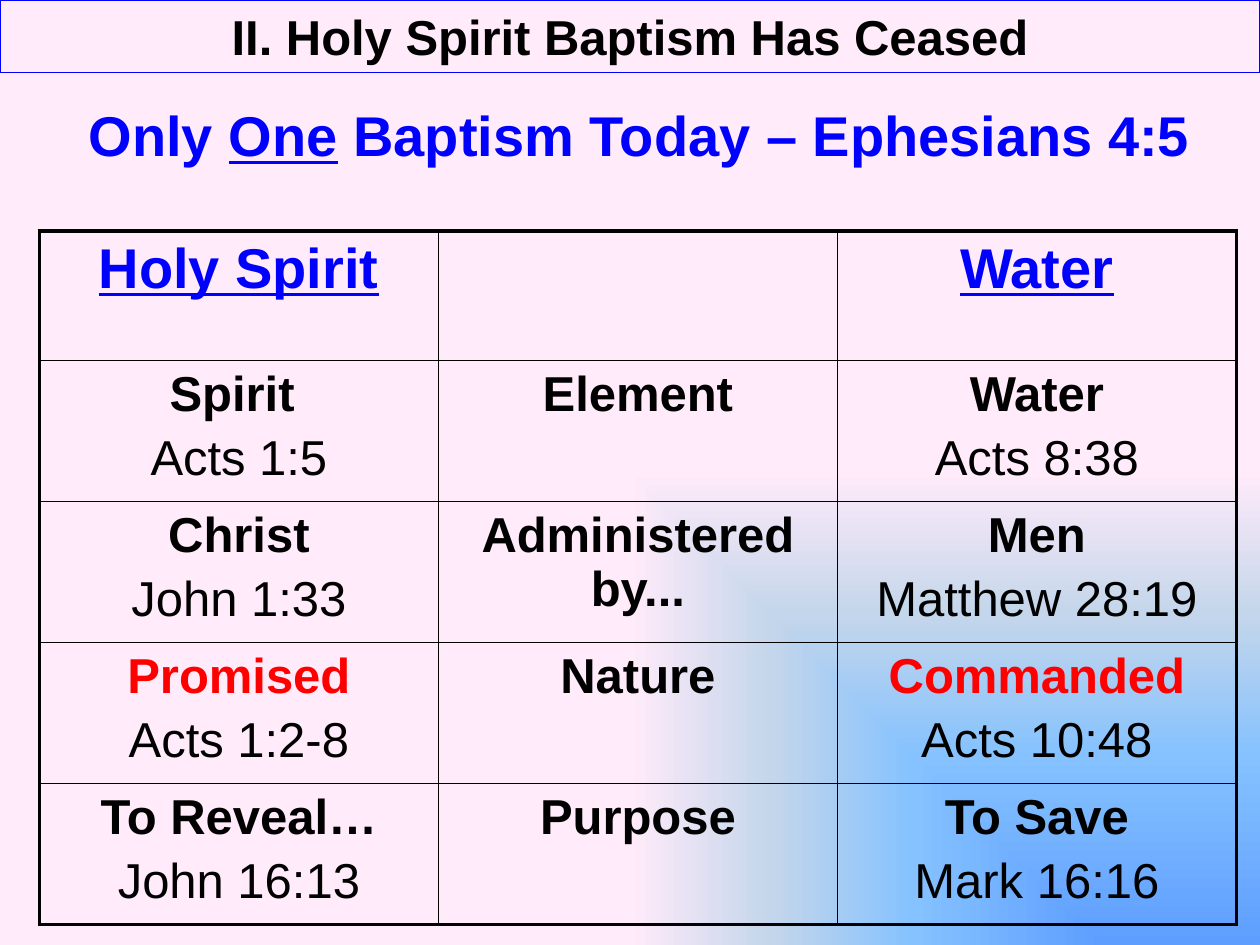
from dataclasses import dataclass

from pptx import Presentation
from pptx.dml.color import RGBColor as Color
from pptx.enum.shapes import MSO_SHAPE as Shape
from pptx.enum.text import MSO_ANCHOR as Anchor, MSO_AUTO_SIZE as AutoSize, PP_ALIGN as Align
from pptx.oxml import parse_xml
from pptx.util import Pt

NAMESPACES = (
    'xmlns:a="http://schemas.openxmlformats.org/drawingml/2006/main" '
    'xmlns:p="http://schemas.openxmlformats.org/presentationml/2006/main"'
)


@dataclass(frozen=True)
class Theme:
    font: str = "Arial"
    ink: str = "000000"
    blue: str = "0000FF"
    red: str = "FF0000"
    heading: int = 32
    body: int = 28
    thin: float = 1
    thick: float = 2.25
    gradient: tuple = ((0, "5E9EFF"), (40, "85C2FF"), (70, "C4D6EB"), (100, "FFEBFA"))


THEME = Theme()

HEADERS = ("Holy Spirit", "", "Water")
ROWS = (
    (("Spirit ", "Acts 1:5"), "Element", ("Water", "Acts 8:38"), THEME.ink),
    (("Christ", "John 1:33"), "Administered by...", ("Men", "Matthew 28:19"), THEME.ink),
    (("Promised", "Acts 1:2-8"), "Nature", ("Commanded", "Acts 10:48"), THEME.red),
    (("To Reveal…", "John 16:13"), "Purpose", ("To Save", "Mark 16:16"), THEME.ink),
)


def add_text(para, text, size=THEME.body, color=THEME.ink, bold=True, underline=False):
    para.alignment = Align.CENTER
    span = para.add_run()
    span.text = text
    span.font.name = THEME.font
    span.font.size = Pt(size)
    span.font.bold = bold
    span.font.underline = underline
    span.font.color.rgb = Color.from_string(color)


def paint_background(page):
    stops = "".join(
        f'<a:gs pos="{position * 1000}"><a:srgbClr val="{color}"/></a:gs>'
        for position, color in THEME.gradient
    )
    page.element.cSld.insert(0, parse_xml(
        f'<p:bg {NAMESPACES}><p:bgPr><a:gradFill rotWithShape="1"><a:gsLst>{stops}</a:gsLst>'
        '<a:path path="rect"><a:fillToRect l="100000" t="100000"/></a:path>'
        '</a:gradFill><a:effectLst/></p:bgPr></p:bg>'
    ))


def add_banner(page, left, top, width, height):
    box = page.shapes.add_shape(Shape.RECTANGLE, Pt(left), Pt(top), Pt(width), Pt(height))
    box.shadow.inherit = False
    box.fill.background()
    box.line.color.rgb = Color.from_string(THEME.blue)
    box.line.width = Pt(0.75)
    box.text_frame.vertical_anchor = Anchor.TOP
    box.text_frame.auto_size = AutoSize.SHAPE_TO_FIT_TEXT
    add_text(box.text_frame.paragraphs[0], "II. Holy Spirit Baptism Has Ceased")


def add_subtitle(page, left, top, width, height):
    box = page.shapes.add_textbox(Pt(left), Pt(top), Pt(width), Pt(height))
    box.text_frame.word_wrap = False
    box.text_frame.auto_size = AutoSize.SHAPE_TO_FIT_TEXT
    para = box.text_frame.paragraphs[0]
    for text, underline in (
        ("Only ", False), ("One", True), (" Baptism Today – Ephesians 4:5", False)
    ):
        add_text(para, text, THEME.heading, THEME.blue, underline=underline)


def set_borders(cell, outer_edges):
    properties = cell._tc.get_or_add_tcPr()
    for side in "LRTB":
        width = Pt(THEME.thick if side in outer_edges else THEME.thin)
        properties.append(parse_xml(
            f'<a:ln{side} {NAMESPACES} w="{width}"><a:solidFill>'
            f'<a:srgbClr val="{THEME.ink}"/></a:solidFill></a:ln{side}>'
        ))


def fill_cell(cell, lines):
    frame = cell.text_frame
    for index, (text, style) in enumerate(lines):
        para = frame.add_paragraph() if index else frame.paragraphs[0]
        para.space_before = Pt(0.2 * style.get("size", THEME.body))
        add_text(para, text, **style)


def add_comparison(page, left, top, width, header_height, row_height):
    header_style = dict(size=THEME.heading, color=THEME.blue, underline=True)
    content = [[[(text, header_style)] if text else [] for text in HEADERS]]
    for spirit, topic, water, color in ROWS:
        pairs = [
            [(name, dict(color=color)), (verse, dict(bold=False))]
            for name, verse in (spirit, water)
        ]
        content.append([pairs[0], [(topic, {})], pairs[1]])

    last_row, last_column = len(ROWS), len(HEADERS) - 1
    height = header_height + row_height * last_row
    table = page.shapes.add_table(
        last_row + 1, last_column + 1, Pt(left), Pt(top), Pt(width), Pt(height)
    ).table
    table.first_row = table.horz_banding = False
    for column in table.columns:
        column.width = Pt(width / len(HEADERS))
    for row_index, cells in enumerate(content):
        table.rows[row_index].height = Pt(row_height if row_index else header_height)
        for column_index, lines in enumerate(cells):
            cell = table.cell(row_index, column_index)
            edges = {"L": column_index == 0, "R": column_index == last_column,
                     "T": row_index == 0, "B": row_index == last_row}
            set_borders(cell, [side for side, is_outer in edges.items() if is_outer])
            cell.fill.background()
            fill_cell(cell, lines)


def main():
    deck = Presentation()
    deck.slide_width, deck.slide_height = Pt(720), Pt(540)
    page = deck.slides.add_slide(deck.slide_layouts[6])
    paint_background(page)
    add_banner(page, 0, 0, 720, 41.5)
    add_subtitle(page, 34, 54, 663, 46)
    add_comparison(page, 22.5, 132, 684, header_height=74, row_height=80.6)
    deck.save("out.pptx")


if __name__ == "__main__":
    main()
